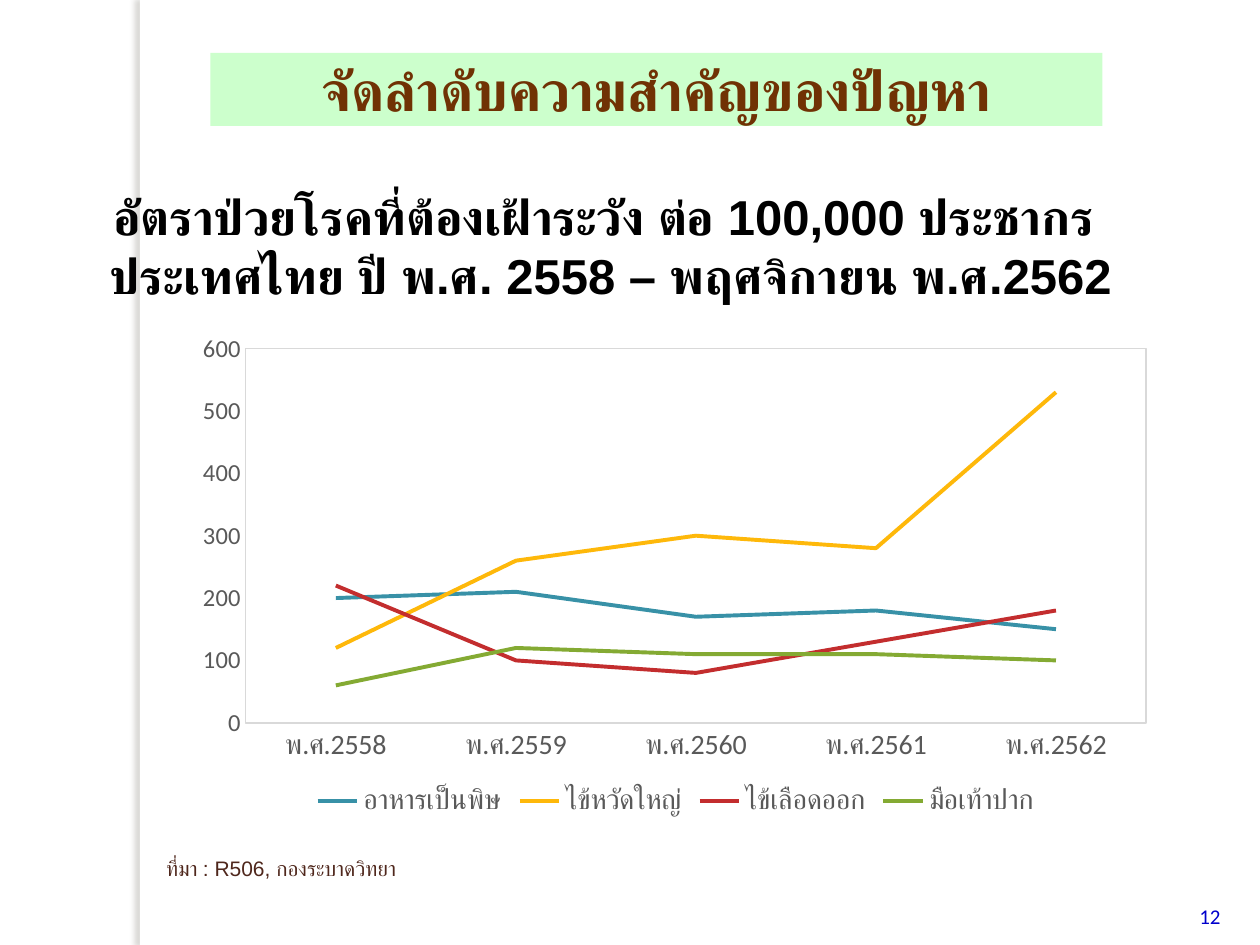
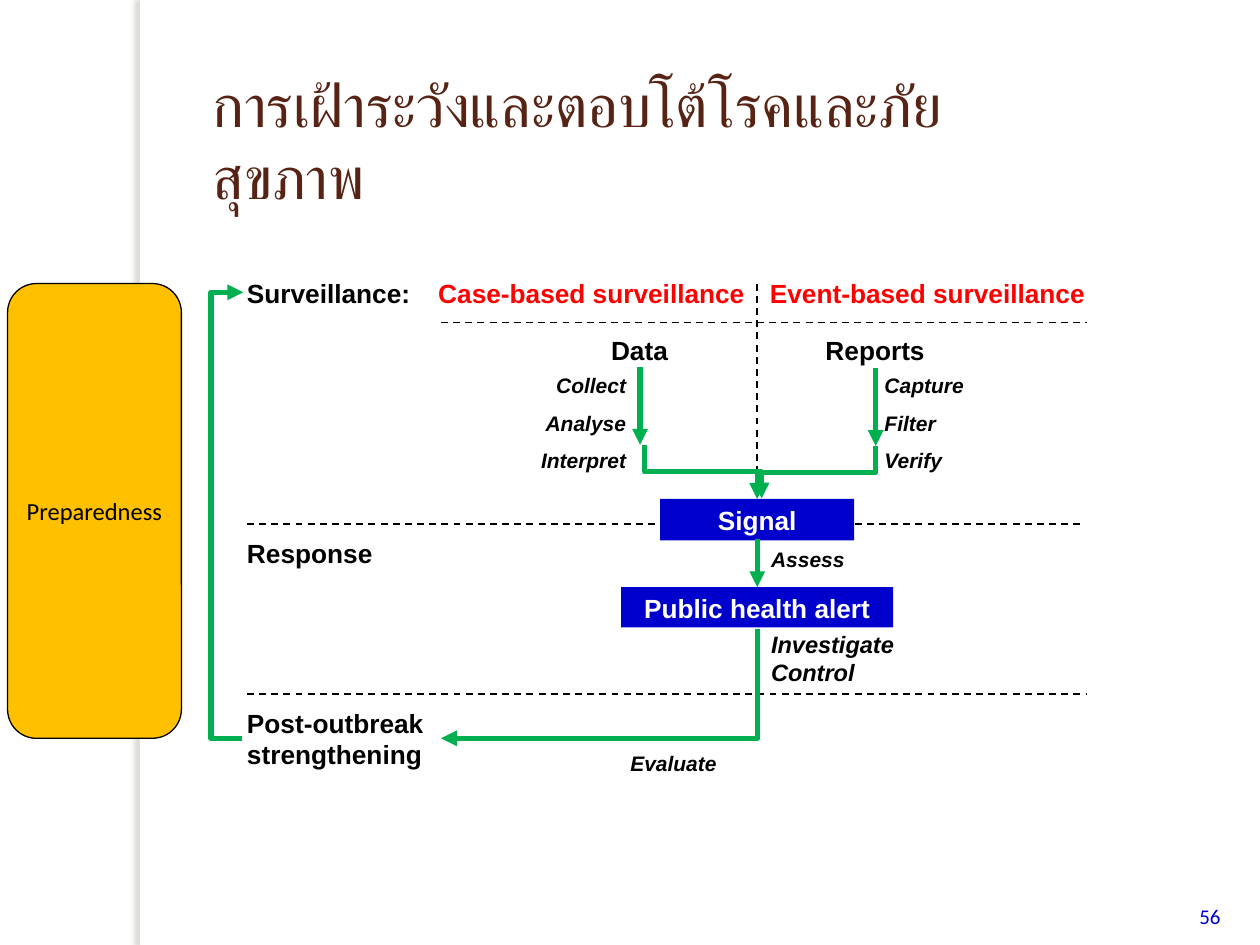
import pptx
import pptx.chart.data
import pptx.dml.color
import pptx.enum.chart
import pptx.enum.dml
import pptx.enum.shapes
import pptx.enum.text
import pptx.oxml
import pptx.oxml.ns
import pptx.util
from lxml import etree

Inches, Pt = pptx.util.Inches, pptx.util.Pt
SHAPES = pptx.enum.shapes.MSO_SHAPE
CONNECTORS = pptx.enum.shapes.MSO_CONNECTOR
ALIGN = {name: getattr(pptx.enum.text.PP_ALIGN, word)
         for name, word in (("l", "LEFT"), ("c", "CENTER"), ("r", "RIGHT"))}
MIDDLE = pptx.enum.text.MSO_ANCHOR.MIDDLE
BOTTOM = pptx.enum.text.MSO_ANCHOR.BOTTOM
qn = pptx.oxml.ns.qn

# Shared colours and insets
BLACK, WHITE, RED, BLUE = "000000", "FFFFFF", "FF0000", "0000CC"
GREEN, AMBER, GREY, PALE = "00B050", "FFC000", "595959", "D9D9D9"
WIDE, TIGHT = (0.1, 0.05), (0.07, 0.04)

# Slide 1 content
RANKING_TITLE = "จัดลำดับความสำคัญของปัญหา"
RATE_HEADING = ["อัตราป่วยโรคที่ต้องเฝ้าระวัง ต่อ 100,000 ประชากร ",
                "ประเทศไทย ปี พ.ศ. 2558 – พฤศจิกายน พ.ศ.2562"]
RATE_SOURCE = "ที่มา : R506, กองระบาดวิทยา"
YEARS = [f"พ.ศ.{year}" for year in range(2558, 2563)]
RATES = [
    ("อาหารเป็นพิษ", "3891A7", [200, 210, 170, 180, 150]),
    ("ไข้หวัดใหญ่", "FEB80A", [120, 260, 300, 280, 530]),
    ("ไข้เลือดออก", "C32D2E", [220, 100, 80, 130, 180]),
    ("มือเท้าปาก", "84AA33", [60, 120, 110, 110, 100]),
]

# Slide 2 content
RESPONSE_TITLE = "การเฝ้าระวังและตอบโต้โรคและภัยสุขภาพ"
DIVIDERS = [
    ((6.01, 4.43), (6.01, 2.22)),
    ((1.96, 4.16), (8.61, 4.16)),
    ((1.96, 5.51), (8.62, 5.51)),
    ((3.5, 2.56), (8.63, 2.56)),
]
# Text, frame, alignment, colour
HEADINGS = [
    ("Data", (3.95, 2.61, 2.25, 0.32), "c", BLACK),
    ("Reports", (5.82, 2.61, 2.25, 0.32), "c", BLACK),
    ("Surveillance:", (1.89, 2.16, 1.7, 0.33), "l", BLACK),
    ("Response", (1.89, 4.22, 1.72, 0.33), "l", BLACK),
    ("Post-outbreak strengthening", (1.89, 5.57, 1.61, 0.58), "l", BLACK),
    ("Case-based surveillance", (2.68, 2.16, 3.3, 0.33), "r", RED),
    ("Event-based surveillance", (6.04, 2.16, 2.71, 0.33), "l", RED),
]
# Paragraphs, frame, alignment, size
ACTIONS = [
    (["Collect", "Analyse", "Interpret"], (3.48, 2.92, 1.56, 0.88), "r", 12),
    (["Capture", "Filter", "Verify"], (6.95, 2.92, 1.17, 0.88), "l", 12),
    (["Assess"], (6.05, 4.3, 1.56, 0.27), "l", 12),
    (["Investigate\nControl"], (6.05, 4.96, 1.56, 0.53), "l", 13.5),
    (["Evaluate"], (4.47, 5.92, 1.75, 0.28), "c", 12),
]
MILESTONES = [
    ("Signal", (5.24, 3.96, 1.54, 0.33)),
    ("Public health alert", (4.93, 4.66, 2.16, 0.32)),
]
ARROWS = [
    ((6.01, 4.28), (6.01, 4.66)),
    ((5.08, 2.91), (5.08, 3.53)),
    ((6.95, 2.92), (6.95, 3.54)),
]
# Unrotated frame, rotation, mirrored, preset, bend position
ELBOWS = [
    ((6.27, 3.28, 0.42, 0.94), 90, False, "bentConnector3", 0.5),
    ((5.37, 3.28, 0.42, 0.93), 270, True, "bentConnector3", 0.5),
    ((4.32, 4.17, 0.87, 2.51), 90, False, "bentConnector2", None),
    ((1.92, 2.32, 0.01, 3.54), 180, True, "bentConnector3", -25),
]


def rgb(code):
    return pptx.dml.color.RGBColor.from_string(code)


def style_font(font, size, color, name="Arial", bold=None, italic=None):
    font.size, font.name = Pt(size), name
    font.bold, font.italic = bold, italic
    font.color.rgb = rgb(color)


def write(box, lines, size, color, align="l", insets=WIDE, anchor=None,
          gap=0, **font):
    frame = box.text_frame
    frame.word_wrap = True
    frame.vertical_anchor = anchor or pptx.enum.text.MSO_ANCHOR.TOP
    frame.margin_left = frame.margin_right = Inches(insets[0])
    frame.margin_top = frame.margin_bottom = Inches(insets[1])
    for index, line in enumerate(lines):
        para = frame.add_paragraph() if index else frame.paragraphs[0]
        para.text = line
        para.alignment = ALIGN[align]
        if index and gap:
            para.space_before = Pt(gap)
        style_font(para.font, size, color, **font)


def add_text(page, frame, lines, size, color, **options):
    box = page.shapes.add_textbox(*map(Inches, frame))
    write(box, lines, size, color, **options)


def add_block(page, frame, fill, kind=SHAPES.RECTANGLE, outline=None):
    block = page.shapes.add_shape(kind, *map(Inches, frame))
    block.shadow.inherit = False
    block.fill.solid()
    block.fill.fore_color.rgb = rgb(fill)
    if outline:
        block.line.color.rgb = rgb(outline)
        block.line.width = Pt(0.75)
    else:
        block.line.fill.background()
    return block


def add_line(page, start, end, color, width, dashed=False, arrow=False,
             kind=CONNECTORS.STRAIGHT):
    line = page.shapes.add_connector(kind, *map(Inches, start + end))
    line.line.color.rgb = rgb(color)
    line.line.width = Pt(width)
    if dashed:
        line.line.dash_style = pptx.enum.dml.MSO_LINE.DASH
    properties = line._element.spPr
    if arrow:
        etree.SubElement(properties.find(qn("a:ln")), qn("a:tailEnd"),
                         type="triangle")
    etree.SubElement(properties, qn("a:effectLst"))
    return line


def add_elbow(page, frame, turn, mirrored, preset, bend):
    left, top, width, height = frame
    elbow = add_line(page, (left, top), (left + width, top + height), GREEN, 3,
                     arrow=True, kind=CONNECTORS.ELBOW)
    properties = elbow._element.spPr
    transform = properties.find(qn("a:xfrm"))
    transform.set("rot", str(turn * 60000))
    if mirrored:
        transform.set("flipH", "1")
    geometry = properties.find(qn("a:prstGeom"))
    geometry.set("prst", preset)
    if bend is not None:
        guides = geometry.find(qn("a:avLst"))
        if guides is None:
            guides = etree.SubElement(geometry, qn("a:avLst"))
        etree.SubElement(guides, qn("a:gd"), name="adj1",
                         fmla=f"val {round(bend * 100000)}")


def add_page(deck, number):
    """Blank page with the shaded side band and the page number."""
    page = deck.slides.add_slide(deck.slide_layouts[6])
    band = add_block(page, (1.11, 0, 0.08, 7.5), WHITE)
    effects = band._element.spPr.find(qn("a:effectLst"))
    shadow = etree.SubElement(effects, qn("a:outerShdw"), blurRad=str(Pt(3)),
                              dist=str(Pt(3)), dir=str(180 * 60000),
                              algn="tl", rotWithShape="0")
    tint = etree.SubElement(shadow, qn("a:srgbClr"), val="736F63")
    etree.SubElement(tint, qn("a:alpha"), val="25000")
    add_text(page, (9.42, 6.9, 0.5, 0.52), [str(number)], 12, BLUE,
             anchor=BOTTOM, name="Calibri")
    return page


def frame_plot(chart):
    """Place the plot area and give it a thin outline."""
    area = chart._chartSpace.chart.plotArea
    layout = area.find(qn("c:layout"))
    if layout is None:
        layout = etree.Element(qn("c:layout"))
        area.insert(0, layout)
    manual = etree.SubElement(layout, qn("c:manualLayout"))
    settings = [("layoutTarget", "inner"), ("xMode", "edge"), ("yMode", "edge"),
                ("x", 0.063), ("y", 0.05), ("w", 0.916), ("h", 0.754)]
    for tag, value in settings:
        etree.SubElement(manual, qn(f"c:{tag}"), val=str(value))
    properties = etree.SubElement(area, qn("c:spPr"))
    etree.SubElement(properties, qn("a:noFill"))
    outline = etree.SubElement(properties, qn("a:ln"), w=str(Pt(0.75)))
    fill = etree.SubElement(outline, qn("a:solidFill"))
    etree.SubElement(fill, qn("a:srgbClr"), val=PALE)


def add_rate_chart(page):
    data = pptx.chart.data.CategoryChartData()
    data.categories = YEARS
    for name, _, values in RATES:
        data.add_series(name, values)
    chart = page.shapes.add_chart(
        pptx.enum.chart.XL_CHART_TYPE.LINE,
        *map(Inches, (1.46, 2.57, 7.8, 3.94)), data).chart
    style_font(chart.font, 10, BLACK, "Calibri")
    chart.has_title = False
    chart.plots[0].vary_by_categories = False
    for series, (_, color, _) in zip(chart.plots[0].series, RATES):
        series.smooth = False
        series.format.line.color.rgb = rgb(color)
        series.format.line.width = Pt(2.25)

    # Axes and legend
    for axis, size in ((chart.category_axis, 16), (chart.value_axis, 14)):
        axis.has_major_gridlines = False
        axis.major_tick_mark = pptx.enum.chart.XL_TICK_MARK.NONE
        axis.minor_tick_mark = pptx.enum.chart.XL_TICK_MARK.NONE
        style_font(axis.tick_labels.font, size, GREY, "Calibri")
    chart.category_axis.format.line.color.rgb = rgb(PALE)
    chart.category_axis.format.line.width = Pt(0.75)
    scale = chart.value_axis
    scale.minimum_scale, scale.maximum_scale, scale.major_unit = 0, 600, 100
    scale.format.line.fill.background()
    chart.has_legend = True
    chart.legend.position = pptx.enum.chart.XL_LEGEND_POSITION.BOTTOM
    chart.legend.include_in_layout = False
    style_font(chart.legend.font, 16, GREY, "Calibri")
    frame_plot(chart)


def build_ranking(deck):
    page = add_page(deck, 12)
    banner = add_block(page, (1.67, 0.42, 7.08, 0.58), "CCFFCC")
    write(banner, [RANKING_TITLE], 32, "703204", align="c", anchor=MIDDLE,
          bold=True)
    add_text(page, (0.3, 1.33, 9.09, 1.24), RATE_HEADING, 28, BLACK,
             align="c", anchor=MIDDLE, bold=True)
    add_rate_chart(page)
    add_text(page, (1.22, 6.74, 3.62, 0.55), [RATE_SOURCE], 12, "4F271C")


def build_response(deck):
    page = add_page(deck, 56)
    add_text(page, (1.59, 0.8, 6.89, 0.62), [RESPONSE_TITLE], 34.1, "572314",
             anchor=MIDDLE)
    for start, end in DIVIDERS:
        add_line(page, start, end, BLACK, 1, dashed=True)

    # Labels and boxes
    for text, frame, align, color in HEADINGS:
        add_text(page, frame, [text], 15, color, align=align, insets=TIGHT,
                 bold=True)
    for lines, frame, align, size in ACTIONS:
        add_text(page, frame, lines, size, BLACK, align=align, insets=TIGHT,
                 gap=7, bold=True, italic=True)
    for text, frame in MILESTONES:
        write(add_block(page, frame, BLUE), [text], 15, WHITE, align="c",
              insets=TIGHT, bold=True)

    # Flow
    for start, end in ARROWS:
        add_line(page, start, end, GREEN, 3, arrow=True)
    for elbow in ELBOWS:
        add_elbow(page, *elbow)

    preparedness = add_block(page, (0.06, 2.25, 1.38, 3.61), AMBER,
                             SHAPES.ROUNDED_RECTANGLE, BLACK)
    write(preparedness, ["Preparedness"], 14, BLACK, align="c", insets=TIGHT,
          anchor=MIDDLE, name="Calibri")


def main():
    deck = pptx.Presentation()
    deck.slide_width, deck.slide_height = Inches(10), Inches(7.5)
    build_ranking(deck)
    build_response(deck)
    deck.save("out.pptx")


if __name__ == "__main__":
    main()
